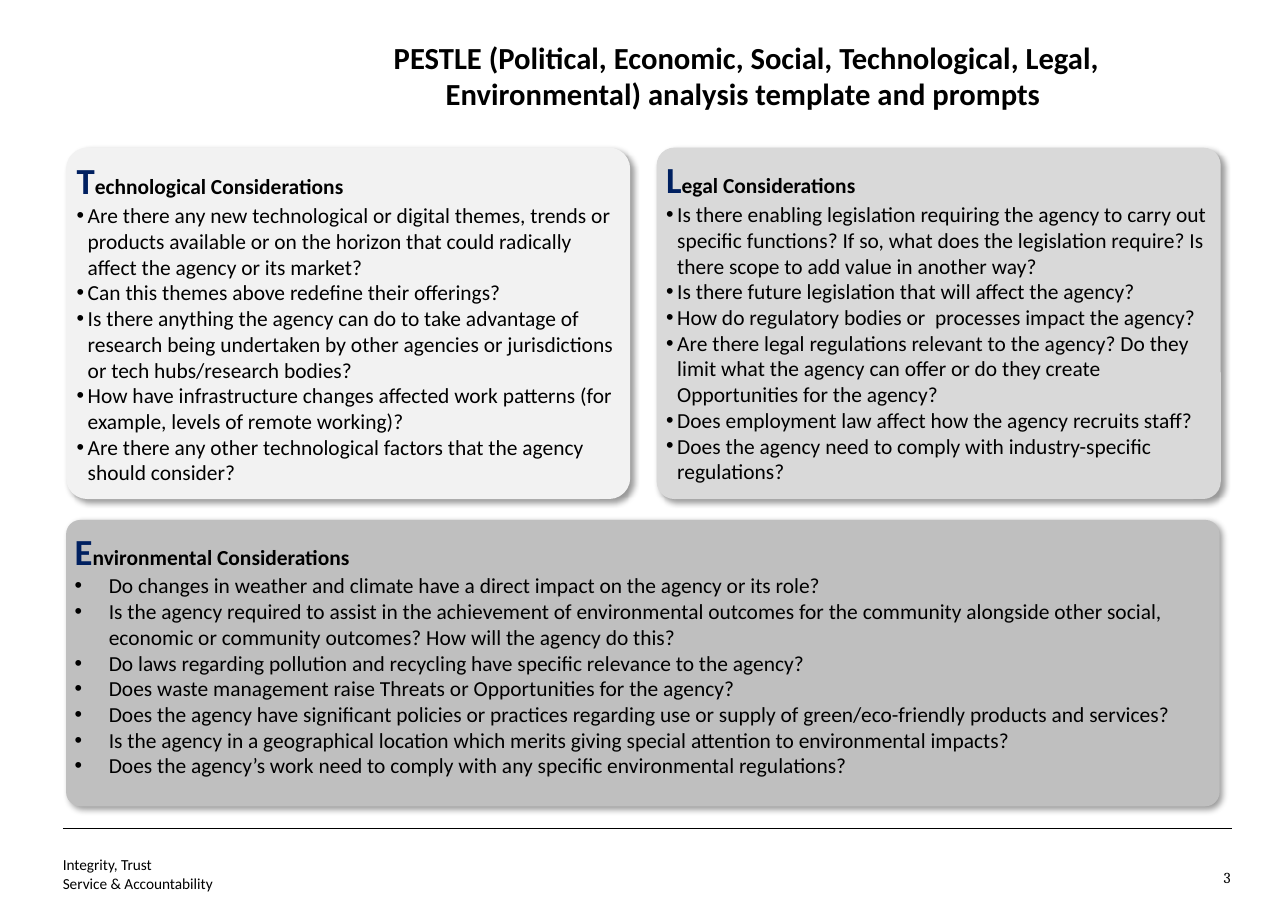
from dataclasses import dataclass

from lxml import etree
from pptx import Presentation
from pptx.dml.color import RGBColor
from pptx.enum.shapes import MSO_CONNECTOR, MSO_SHAPE
from pptx.enum.text import MSO_ANCHOR, MSO_AUTO_SIZE, PP_ALIGN
from pptx.oxml.ns import qn
from pptx.util import Inches, Pt

LEFT, CENTER, RIGHT = PP_ALIGN.LEFT, PP_ALIGN.CENTER, PP_ALIGN.RIGHT
TOP, BOTTOM = MSO_ANCHOR.TOP, MSO_ANCHOR.BOTTOM
NO_FIT = MSO_AUTO_SIZE.NONE
ROUNDED = MSO_SHAPE.ROUNDED_RECTANGLE
STRAIGHT = MSO_CONNECTOR.STRAIGHT

BLACK = RGBColor(0x00, 0x00, 0x00)
NAVY = RGBColor(0x00, 0x20, 0x60)
PALE_GREY = RGBColor(0xF2, 0xF2, 0xF2)
LIGHT_GREY = RGBColor(0xD9, 0xD9, 0xD9)
MID_GREY = RGBColor(0xBF, 0xBF, 0xBF)

INITIAL = {"name": "Calibri", "size": Pt(24), "bold": True}
HEADING = {"name": "Calibri", "size": Pt(14), "bold": True}
PROMPT = {"name": "Calibri", "size": Pt(14), "bold": False}
TITLE = {"name": "Calibri", "size": Pt(20), "bold": True}
FOOTER = {"name": "Calibri", "size": Pt(10)}
PAGE_NUMBER = {"name": "Cambria", "size": Pt(10)}


@dataclass
class Panel:
    left: float
    top: float
    width: float
    height: float
    corner: float
    fill: RGBColor
    indent: float
    heading: str
    prompts: list[str]


PANELS = [
    Panel(0.6, 1.34, 5.12, 3.19, 0.06, PALE_GREY, 0.1, "Technological Considerations", [
        "Are there any new technological or digital themes, trends or products available "
        "or on the horizon that could radically affect the agency or its market?",
        "Can this themes above redefine their offerings?",
        "Is there anything the agency can do to take advantage of research being undertaken "
        "by other agencies or jurisdictions or tech hubs/research bodies?",
        "How have infrastructure changes affected work patterns (for example, levels of "
        "remote working)?",
        "Are there any other technological factors that the agency should consider?",
    ]),
    Panel(5.96, 1.34, 5.12, 3.19, 0.05, LIGHT_GREY, 0.1, "Legal Considerations", [
        "Is there enabling legislation requiring the agency to carry out specific functions? "
        "If so, what does the legislation require? Is there scope to add value in another way?",
        "Is there future legislation that will affect the agency?",
        "How do regulatory bodies or  processes impact the agency?",
        "Are there legal regulations relevant to the agency? Do they limit what the agency "
        "can offer or do they create Opportunities for the agency?",
        "Does employment law affect how the agency recruits staff?",
        "Does the agency need to comply with industry-specific regulations?",
    ]),
    Panel(0.6, 4.72, 10.47, 2.6, 0.05, MID_GREY, 0.31, "Environmental Considerations", [
        "Do changes in weather and climate have a direct impact on the agency or its role?",
        "Is the agency required to assist in the achievement of environmental outcomes for "
        "the community alongside other social, economic or community outcomes? How will the "
        "agency do this?",
        "Do laws regarding pollution and recycling have specific relevance to the agency?",
        "Does waste management raise Threats or Opportunities for the agency?",
        "Does the agency have significant policies or practices regarding use or supply of "
        "green/eco-friendly products and services?",
        "Is the agency in a geographical location which merits giving special attention to "
        "environmental impacts?",
        "Does the agency’s work need to comply with any specific environmental regulations?",
    ]),
]


def add_run(p, text: str, style: dict, color: RGBColor = BLACK) -> None:
    r = p.add_run()
    r.text = text
    for name, value in style.items():
        setattr(r.font, name, value)
    r.font.color.rgb = color


def set_frame(tf, anchor, x_inset: float, y_inset: float, wrap: bool = True) -> None:
    frame = {
        "margin_left": Inches(x_inset), "margin_right": Inches(x_inset),
        "margin_top": Inches(y_inset), "margin_bottom": Inches(y_inset),
        "auto_size": NO_FIT, "word_wrap": wrap, "vertical_anchor": anchor,
    }
    for name, value in frame.items():
        setattr(tf, name, value)


def add_bullet(p, indent: float) -> None:
    pPr = p._p.get_or_add_pPr()
    pPr.set("marL", str(Inches(indent)))
    pPr.set("indent", str(-Inches(indent)))
    etree.SubElement(pPr, qn("a:buFont"), typeface="Arial")
    etree.SubElement(pPr, qn("a:buChar"), char="•")


def add_shadow(sp) -> None:
    sp.shadow.inherit = False
    effects = sp._element.spPr.find(qn("a:effectLst"))
    shadow = etree.SubElement(effects, qn("a:outerShdw"), blurRad=str(Pt(4)),
                              dist=str(Pt(3)), dir="2700000", algn="tl", rotWithShape="0")
    color = etree.SubElement(shadow, qn("a:srgbClr"), val=str(BLACK))
    etree.SubElement(color, qn("a:alpha"), val="40000")


def add_panel(s, panel: Panel) -> None:
    sp = s.shapes.add_shape(ROUNDED, Inches(panel.left), Inches(panel.top),
                            Inches(panel.width), Inches(panel.height))
    sp.adjustments[0] = panel.corner
    sp.fill.solid()
    sp.fill.fore_color.rgb = panel.fill
    sp.line.fill.background()
    add_shadow(sp)
    tf = sp.text_frame
    set_frame(tf, TOP, 0.04, 0.04)
    p = tf.paragraphs[0]
    p.alignment = LEFT
    add_run(p, panel.heading[0], INITIAL, NAVY)
    add_run(p, panel.heading[1:], HEADING)
    for prompt in panel.prompts:
        p = tf.add_paragraph()
        p.alignment = LEFT
        add_bullet(p, panel.indent)
        add_run(p, prompt, PROMPT)


def add_title(s, text: str) -> None:
    sp = s.shapes.title
    sp.left, sp.top, sp.width, sp.height = map(Inches, (2.7, 0.29, 8.15, 0.73))
    set_frame(sp.text_frame, TOP, 0.11, 0.06)
    p = sp.text_frame.paragraphs[0]
    p.alignment = CENTER
    add_run(p, text, TITLE)


def add_footer(s) -> None:
    line = s.shapes.add_connector(STRAIGHT, Inches(0.57), Inches(7.52),
                                  Inches(11.18), Inches(7.52))
    line.line.color.rgb = BLACK
    line.line.width = Pt(0.5)
    etree.SubElement(line._element.spPr, qn("a:effectLst"))

    values = s.shapes.add_textbox(Inches(0.57), Inches(7.66), Inches(3.7), Inches(0.44))
    set_frame(values.text_frame, BOTTOM, 0, 0)
    p = values.text_frame.paragraphs[0]
    add_run(p, "Integrity, Trust", FOOTER)
    p.add_line_break()
    add_run(p, "Service & Accountability", FOOTER)

    number = s.shapes.add_textbox(Inches(10.96), Inches(7.88), Inches(0.21), Inches(0.17))
    set_frame(number.text_frame, TOP, 0, 0, wrap=False)
    p = number.text_frame.paragraphs[0]
    p.alignment = RIGHT
    add_run(p, "3", PAGE_NUMBER)


def main() -> None:
    prs = Presentation()
    prs.slide_width, prs.slide_height = Inches(11.69), Inches(8.27)
    s = prs.slides.add_slide(prs.slide_layouts[5])
    add_title(s, "PESTLE (Political, Economic, Social, Technological, Legal, "
                 "Environmental) analysis template and prompts ")
    for panel in PANELS:
        add_panel(s, panel)
    add_footer(s)
    prs.save("out.pptx")


if __name__ == "__main__":
    main()
